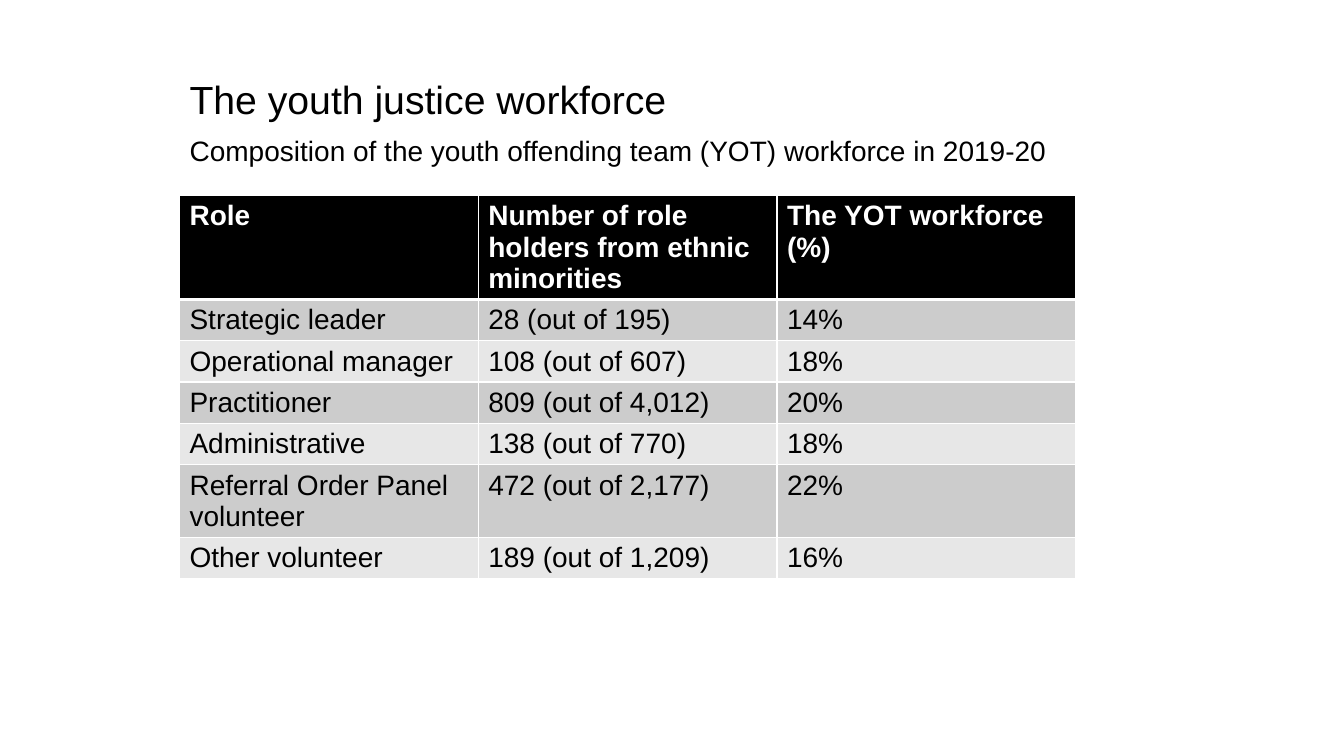
import pptx
import pptx.dml.color
import pptx.enum.text
import pptx.oxml
import pptx.oxml.ns
import pptx.util
from pptx.util import Inches

BLACK = pptx.dml.color.RGBColor(0x00, 0x00, 0x00)
WHITE = pptx.dml.color.RGBColor(0xFF, 0xFF, 0xFF)
DARK_BAND = pptx.dml.color.RGBColor(0xCC, 0xCC, 0xCC)
LIGHT_BAND = pptx.dml.color.RGBColor(0xE7, 0xE7, 0xE7)

HEADINGS = [
    ("The youth justice workforce", 28),
    ("Composition of the youth offending team (YOT) workforce in 2019-20", 20),
]
WORKFORCE = [
    ("Role", "Number of role holders from ethnic minorities", "The YOT workforce (%)"),
    ("Strategic leader", "28 (out of 195)", "14%"),
    ("Operational manager", "108 (out of 607)", "18%"),
    ("Practitioner", "809 (out of 4,012)", "20%"),
    ("Administrative", "138 (out of 770)", "18%"),
    ("Referral Order Panel volunteer", "472 (out of 2,177)", "22%"),
    ("Other volunteer", "189 (out of 1,209)", "16%"),
]
ROW_HEIGHT = 0.41


def apply_format(target, values):
    for name, value in values.items():
        setattr(target, name, value)


def format_font(font, size, color, bold=False):
    apply_format(font, {"name": "Arial", "size": pptx.util.Pt(size), "bold": bold})
    font.color.rgb = color


def place_headings(placeholder, left, top, width, height):
    apply_format(placeholder, {
        "left": Inches(left), "top": Inches(top),
        "width": Inches(width), "height": Inches(height),
    })
    frame = placeholder.text_frame
    apply_format(frame, {
        "word_wrap": True,
        "auto_size": pptx.enum.text.MSO_AUTO_SIZE.NONE,
        "vertical_anchor": pptx.enum.text.MSO_ANCHOR.TOP,
    })
    frame.text = "\n".join(wording for wording, _ in HEADINGS)
    for paragraph, (_, size) in zip(frame.paragraphs, HEADINGS):
        apply_format(paragraph, {
            "alignment": pptx.enum.text.PP_ALIGN.LEFT,
            "line_spacing": 0.9,
            "space_before": pptx.util.Pt(10),
        })
        format_font(paragraph.runs[0].font, size, BLACK)


def add_borders(cell, widths):
    """Draw white borders; widths maps each side (L, R, T, B) to points."""
    properties = cell._tc.get_or_add_tcPr()
    for side, width in widths.items():
        properties.append(pptx.oxml.parse_xml(
            f'<a:ln{side} {pptx.oxml.ns.nsdecls("a")} w="{pptx.util.Pt(width)}">'
            f'<a:solidFill><a:srgbClr val="{WHITE}"/></a:solidFill></a:ln{side}>'
        ))


def format_cell(cell, row_index):
    is_header = row_index == 0
    add_borders(cell, {"L": 1, "R": 1, "T": 3 if row_index == 1 else 1, "B": 3 if is_header else 1})
    band = DARK_BAND if row_index % 2 else LIGHT_BAND
    cell.fill.solid()
    cell.fill.fore_color.rgb = BLACK if is_header else band
    font = cell.text_frame.paragraphs[0].runs[0].font
    format_font(font, 20, WHITE if is_header else BLACK, bold=is_header)


def add_workforce_table(slide, left, top, width, height):
    table_frame = slide.shapes.add_table(
        len(WORKFORCE), len(WORKFORCE[0]),
        Inches(left), Inches(top), Inches(width), Inches(height),
    )
    table = table_frame.table
    for row_index, entries in enumerate(WORKFORCE):
        table.rows[row_index].height = Inches(ROW_HEIGHT)
        for column_index, entry in enumerate(entries):
            cell = table.cell(row_index, column_index)
            cell.text = entry
            format_cell(cell, row_index)
    table_frame.height = Inches(height)


def build_workforce_slide(presentation):
    slide = presentation.slides.add_slide(presentation.slide_layouts[0])
    unused_title = slide.shapes.title.element
    unused_title.getparent().remove(unused_title)
    place_headings(slide.placeholders[1], 1.78, 0.75, 10, 5.8)
    add_workforce_table(slide, 1.78, 1.94, 8.89, 4.03)


def main():
    presentation = pptx.Presentation()
    apply_format(presentation, {"slide_width": Inches(13.33), "slide_height": Inches(7.5)})
    build_workforce_slide(presentation)
    presentation.save("out.pptx")


if __name__ == "__main__":
    main()
